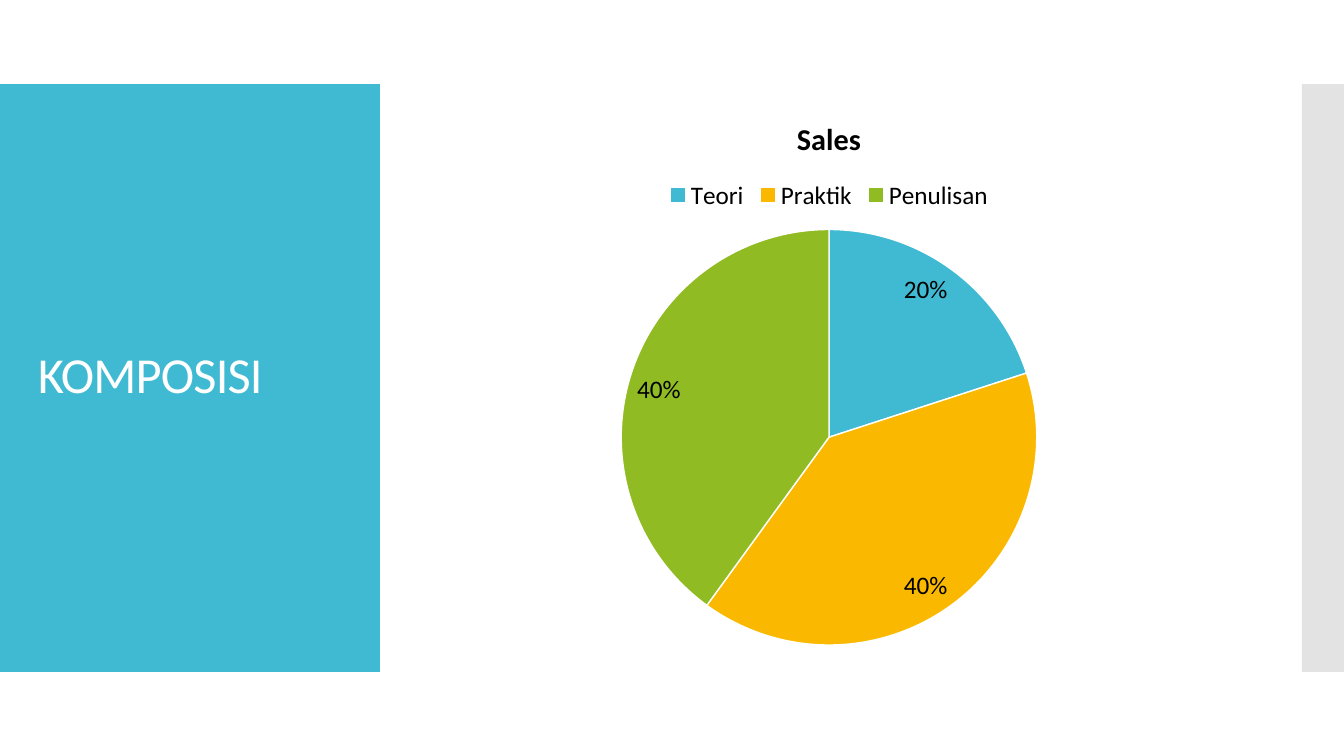
from lxml.etree import SubElement
from pptx import Presentation
from pptx.chart.data import CategoryChartData
from pptx.dml.color import RGBColor
from pptx.enum.chart import XL_CHART_TYPE, XL_LABEL_POSITION, XL_LEGEND_POSITION
from pptx.enum.shapes import MSO_SHAPE
from pptx.enum.text import MSO_ANCHOR
from pptx.oxml.ns import qn
from pptx.util import Emu, Pt

TEAL = RGBColor(0x40, 0xBA, 0xD2)
AMBER = RGBColor(0xFA, 0xB9, 0x00)
GREEN = RGBColor(0x90, 0xBB, 0x23)
GREY = RGBColor(0xC8, 0xC8, 0xC8)
WHITE = RGBColor(0xFF, 0xFF, 0xFF)
BLACK = RGBColor(0x00, 0x00, 0x00)
FONT = "Calibri"

WIDTH, HEIGHT = 1344, 756
HEADING = "KOMPOSISI"
SERIES = "Sales"
PARTS = [("Teori", 20, TEAL), ("Praktik", 40, AMBER), ("Penulisan", 40, GREEN)]
PANELS = [((0, 84, 380, 588), TEAL, 100), ((1302, 84, 42, 588), GREY, 50)]
TITLE_BOX = (28, 124, 325, 507)
CHART_BOX = (426, 95, 806, 564)


def px(n):
    return Emu(round(n * 12192000 / WIDTH))


def place(box):
    return [px(n) for n in box]


def style(font, size, color, bold=False):
    font.name = FONT
    font.size = Pt(size)
    font.bold = bold
    font.color.rgb = color


def add_panel(slide, box, color, alpha):
    panel = slide.shapes.add_shape(MSO_SHAPE.RECTANGLE, *place(box))
    panel.shadow.inherit = False
    panel.fill.solid()
    panel.fill.fore_color.rgb = color
    panel.line.fill.background()
    if alpha < 100:
        tint = panel.fill._xPr.find(".//" + qn("a:srgbClr"))
        SubElement(tint, qn("a:alpha")).set("val", str(alpha * 1000))


def add_heading(slide):
    frame = slide.shapes.add_textbox(*place(TITLE_BOX)).text_frame
    frame.word_wrap = True
    frame.vertical_anchor = MSO_ANCHOR.MIDDLE
    frame.text = HEADING
    line = frame.paragraphs[0]
    line.line_spacing = 0.9
    run = line.runs[0]
    style(run.font, 36, WHITE)
    run.font._element.set("spc", "-60")


def add_pie(slide):
    data = CategoryChartData()
    data.categories = [name for name, _, _ in PARTS]
    data.add_series(SERIES, [share for _, share, _ in PARTS])
    chart = slide.shapes.add_chart(XL_CHART_TYPE.PIE, *place(CHART_BOX), data).chart
    style(chart.font, 18, BLACK)

    chart.has_title = True
    title = chart.chart_title
    title.include_in_layout = False
    title.text_frame.text = SERIES
    style(title.text_frame.paragraphs[0].runs[0].font, 21.6, BLACK, True)

    chart.has_legend = True
    chart.legend.position = XL_LEGEND_POSITION.TOP
    chart.legend.include_in_layout = False
    style(chart.legend.font, 18, BLACK)

    plot = chart.plots[0]
    plot.vary_by_categories = True
    for i, (_, _, color) in enumerate(PARTS):
        form = plot.series[0].points[i].format
        form.fill.solid()
        form.fill.fore_color.rgb = color
        form.line.color.rgb = WHITE
        form.line.width = Pt(1)

    plot.has_data_labels = True
    labels = plot.data_labels
    labels.show_value = False
    labels.show_percentage = True
    labels.number_format = "0%"
    labels.number_format_is_linked = False
    labels.position = XL_LABEL_POSITION.INSIDE_END
    style(labels.font, 18, BLACK)


def main():
    deck = Presentation()
    deck.slide_width, deck.slide_height = px(WIDTH), px(HEIGHT)
    slide = deck.slides.add_slide(deck.slide_layouts[6])
    for panel in PANELS:
        add_panel(slide, *panel)
    add_heading(slide)
    add_pie(slide)
    deck.save("out.pptx")


if __name__ == "__main__":
    main()
